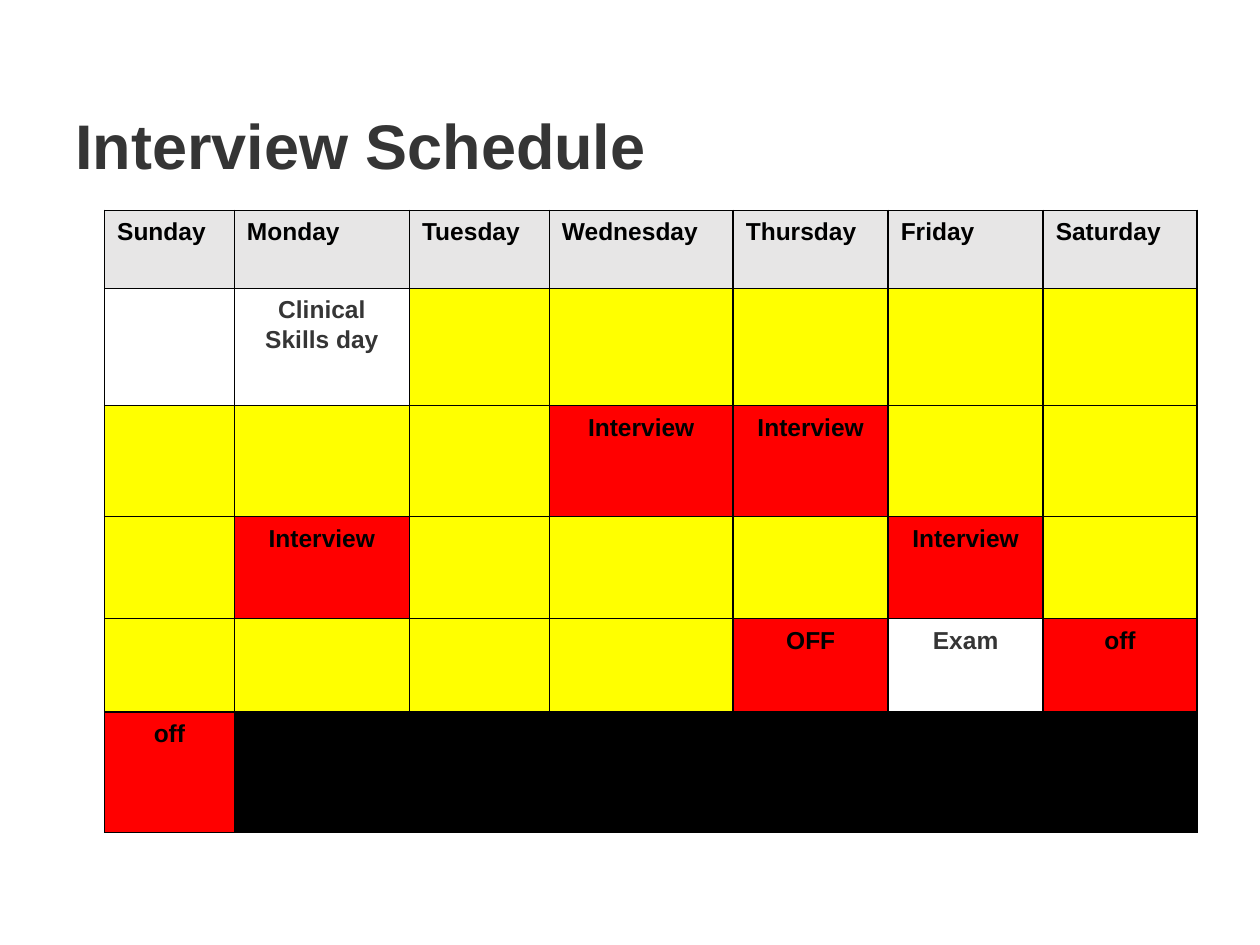
import pptx
import pptx.dml.color
import pptx.enum.text
import pptx.oxml
import pptx.util
from dataclasses import dataclass
from pptx.util import Inches

ALIGN = pptx.enum.text.PP_ALIGN


@dataclass(frozen=True)
class Theme:
    font: str = "Arial"
    title_size: int = 36
    cell_size: int = 14
    dark: str = "353535"
    black: str = "000000"
    header: str = "E7E6E6"
    work: str = "FFFF00"
    away: str = "FF0000"


def rgb(value):
    return pptx.dml.color.RGBColor.from_string(value)


class SlideBuilder:
    def __init__(self, s, theme):
        self.s = s
        self.theme = theme

    def run(self, p, text, size, color):
        r = p.add_run()
        r.text = text
        r.font.name = self.theme.font
        r.font.size = pptx.util.Pt(size)
        r.font.bold = True
        r.font.color.rgb = rgb(color)

    def title(self, text, left, top, width, height):
        sp = self.s.shapes.add_textbox(
            Inches(left), Inches(top), Inches(width), Inches(height))
        tf = sp.text_frame
        tf.word_wrap = True
        tf.vertical_anchor = pptx.enum.text.MSO_ANCHOR.MIDDLE
        self.run(tf.paragraphs[0], text, self.theme.title_size, self.theme.dark)

    def borders(self, cell):
        """Draw a 1 pt line on all four sides; call before filling the cell."""
        props = cell._tc.get_or_add_tcPr()
        for side in ("lnL", "lnR", "lnT", "lnB"):
            props.append(pptx.oxml.parse_xml(
                f'<a:{side} xmlns:a="http://schemas.openxmlformats.org/drawingml/2006/main"'
                f' w="12700"><a:solidFill><a:srgbClr val="{self.theme.black}"/>'
                f'</a:solidFill></a:{side}>'))

    def cell(self, cell, text, fill, align):
        self.borders(cell)
        if fill:
            cell.fill.solid()
            cell.fill.fore_color.rgb = rgb(fill)
        else:
            cell.fill.background()
        if text:
            p = cell.text_frame.paragraphs[0]
            p.alignment = align
            p.line_spacing = 1.07
            p.space_after = pptx.util.Pt(8)
            color = self.theme.black if fill else self.theme.dark
            self.run(p, text, self.theme.cell_size, color)

    def calendar(self, left, top, widths, heights, days, weeks):
        """Each week is a list of (text, fill) pairs, one for each day."""
        frame = self.s.shapes.add_table(
            len(heights), len(widths), Inches(left), Inches(top),
            Inches(sum(widths)), Inches(sum(heights)))
        table = frame.table
        table.first_row = table.horz_banding = False
        for column, width in zip(table.columns, widths):
            column.width = Inches(width)
        for row, height in zip(table.rows, heights):
            row.height = Inches(height)
        for i, day in enumerate(days):
            self.cell(table.cell(0, i), day, self.theme.header, ALIGN.LEFT)
        for w, week in enumerate(weeks, 1):
            for i, (text, fill) in enumerate(week):
                self.cell(table.cell(w, i), text, fill, ALIGN.CENTER)


def main():
    prs = pptx.Presentation()
    prs.slide_width, prs.slide_height = Inches(10), Inches(7.5)
    theme = Theme()
    slide = SlideBuilder(prs.slides.add_slide(prs.slide_layouts[6]), theme)

    work = ("", theme.work)
    closed = ("", theme.black)
    interview = ("Interview", theme.away)
    off = ("off", theme.away)
    weeks = [
        [("", None), ("Clinical Skills day", None)] + [work] * 5,
        [work] * 3 + [interview] * 2 + [work] * 2,
        [work, interview] + [work] * 3 + [interview, work],
        [work] * 4 + [("OFF", theme.away), ("Exam", None), off],
        [off] + [closed] * 6,
    ]
    days = ["Sunday", "Monday", "Tuesday", "Wednesday",
            "Thursday", "Friday", "Saturday"]

    slide.title("Interview Schedule", 0.5, 0.62, 9, 1.05)
    slide.calendar(0.83, 1.67,
                   [1.03, 1.39, 1.11, 1.46, 1.23, 1.23, 1.22],
                   [0.62, 0.93, 0.88, 0.81, 0.74, 0.96],
                   days, weeks)
    prs.save("out.pptx")


if __name__ == "__main__":
    main()
